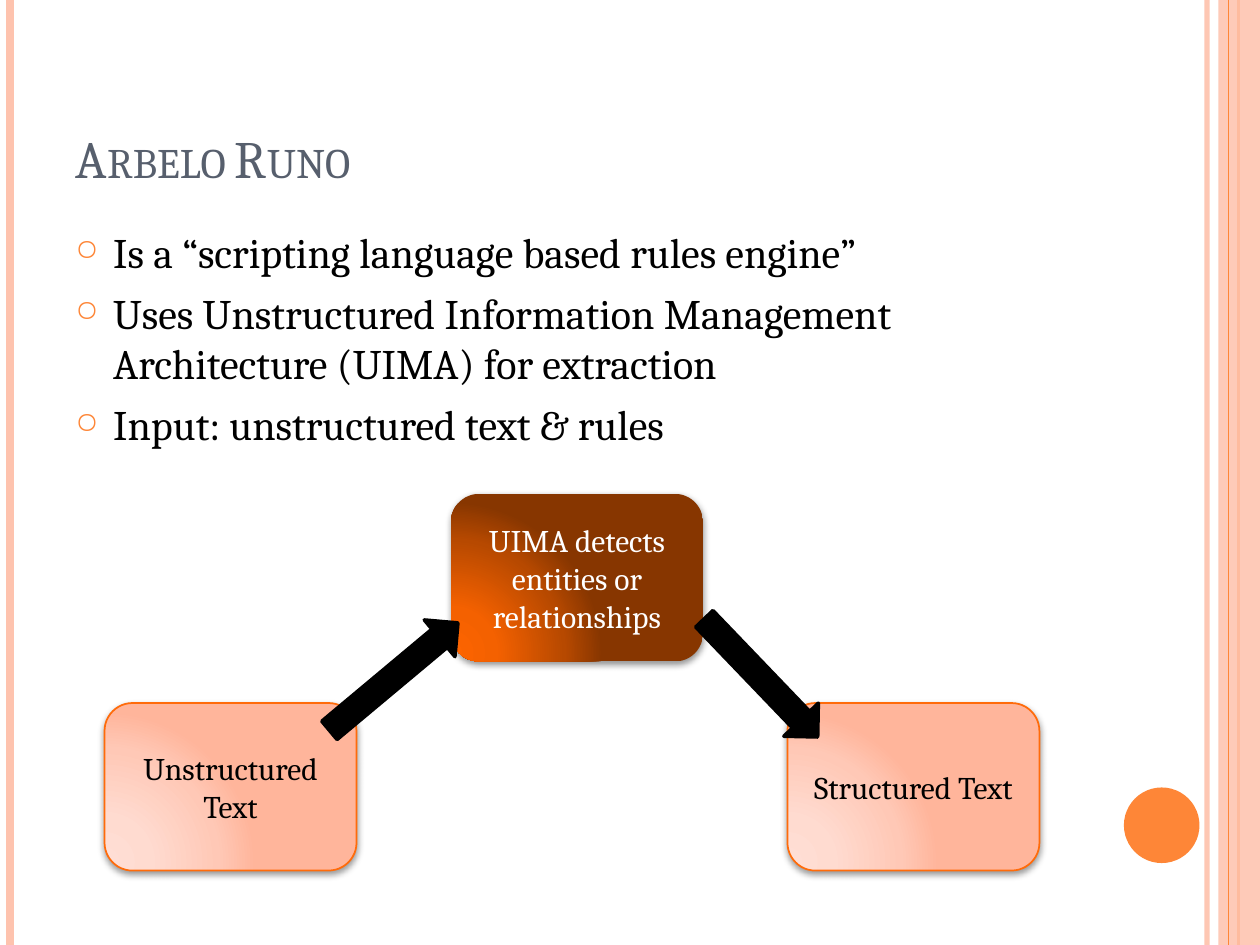
from lxml import etree
from pptx import Presentation
from pptx.dml.color import RGBColor
from pptx.enum import shapes, text
from pptx.oxml import parse_xml
from pptx.oxml.ns import nsdecls, qn
from pptx.util import Inches, Pt

FONT = "Cambria"
ORANGE, PEACH, BLACK = "FE8637", "FEC3AE", "000000"
SHAPE = shapes.MSO_SHAPE

TITLE = "Arbelo Runo"
BULLETS = [
    "Is a “scripting language based rules engine”",
    "Uses Unstructured Information Management Architecture (UIMA) for extraction",
    "Input: unstructured text & rules",
]
# x, colour, width in points, opacity in percent
RULES_BEHIND = [(9.58, PEACH, 3, 93), (0.08, PEACH, 4.5, 100), (9.83, ORANGE, 1.5, 100)]
RULE_IN_FRONT = (9.75, ORANGE, 0.75, 100)

LIGHT = dict(stops=[(0, "FFDED5"), (30, "FFDBD0"), (75, "FFC8B6"), (100, "FFB59B")],
             line="FF6B0A", color=BLACK, shadow=(40, 2))
DARK = dict(stops=[(0, "FD6400"), (30, "F46100"), (75, "B74900"), (100, "873600")],
            line=None, color="FFFFFF", shadow=(42, 1.6))
BOX_SIZE = (2, 1.33)
BOXES = [
    ("Unstructured Text", 0.83, 5.58, LIGHT),
    ("Structured Text", 6.25, 5.58, LIGHT),
    ("UIMA detects entities or relationships", 3.58, 3.92, DARK),
]
# left, top, width, height, rotation
ARROWS = [(2.46, 5.18, 1.33, 0.38, 320.1), (5.39, 5.19, 1.3, 0.38, 46.2)]


def rgb(color):
    return RGBColor.from_string(color)


def set_alpha(element, percent):
    for clr in element.iter(qn("a:srgbClr")):
        etree.SubElement(clr, qn("a:alpha"), val=str(percent * 1000))


def add_text(p, content, size, color, align=text.PP_ALIGN.LEFT):
    p.alignment = align
    r = p.add_run()
    r.text = content
    r.font.name, r.font.size = FONT, Pt(size)
    r.font.color.rgb = rgb(color)
    return r


def add_rule(s, x, color, width, opacity):
    """Draw a vertical line over the full height of the slide."""
    line = s.shapes.add_connector(shapes.MSO_CONNECTOR.STRAIGHT,
                                  Inches(x), 0, Inches(x), Inches(7.5))
    line.line.color.rgb, line.line.width = rgb(color), Pt(width)
    if opacity < 100:
        set_alpha(line._element.spPr, opacity)
    etree.SubElement(line._element.spPr, qn("a:effectLst"))


def add_shape(s, kind, box, fill=None, line=None, width=1):
    sp = s.shapes.add_shape(kind, *map(Inches, box))
    sp.shadow.inherit = False
    if fill:
        sp.fill.solid()
        sp.fill.fore_color.rgb = rgb(fill)
    if line:
        sp.line.color.rgb, sp.line.width = rgb(line), Pt(width)
    else:
        sp.line.fill.background()
    return sp


def set_glow_fill(sp, stops):
    """Fill with a gradient that spreads from the lower left corner."""
    gs = "".join(f'<a:gs pos="{pos * 1000}"><a:srgbClr val="{color}"/></a:gs>'
                 for pos, color in stops)
    grad = parse_xml(
        f'<a:gradFill {nsdecls("a")} rotWithShape="1"><a:gsLst>{gs}</a:gsLst>'
        '<a:path path="circle"><a:fillToRect l="5000" t="100000" r="120000" b="10000"/>'
        '</a:path></a:gradFill>')
    sp._element.spPr.find(qn("a:prstGeom")).addnext(grad)


def set_shadow(sp, opacity, distance):
    effects = sp._element.spPr.find(qn("a:effectLst"))
    effects.append(parse_xml(
        f'<a:outerShdw {nsdecls("a")} blurRad="{Pt(4)}" dist="{Pt(distance)}" dir="5400000" '
        f'rotWithShape="0"><a:srgbClr val="{BLACK}"/></a:outerShdw>'))
    set_alpha(effects, opacity)


def add_box(s, label, x, y, style):
    sp = add_shape(s, SHAPE.ROUNDED_RECTANGLE, (x, y, *BOX_SIZE), line=style["line"])
    set_glow_fill(sp, style["stops"])
    set_shadow(sp, *style["shadow"])
    tf = sp.text_frame
    tf.word_wrap, tf.vertical_anchor = True, text.MSO_ANCHOR.MIDDLE
    add_text(tf.paragraphs[0], label, 18, style["color"], text.PP_ALIGN.CENTER)


def add_bullet(p, content):
    p.space_before = Pt(6)
    add_text(p, content, 24, BLACK)
    pPr = p._p.get_or_add_pPr()
    pPr.set("marL", str(Inches(0.3)))
    pPr.set("indent", str(Inches(-0.3)))
    for tag, attrs in [("buClr", {}), ("buSzPct", {"val": "70000"}), ("buChar", {"char": "○"})]:
        etree.SubElement(pPr, qn(f"a:{tag}"), attrs)
    etree.SubElement(pPr.find(qn("a:buClr")), qn("a:srgbClr"), val=ORANGE)


def main():
    prs = Presentation()
    prs.slide_width, prs.slide_height = Inches(10), Inches(7.5)
    s = prs.slides.add_slide(prs.slide_layouts[5])

    for rule in RULES_BEHIND:
        add_rule(s, *rule)
    band = add_shape(s, SHAPE.RECTANGLE, (9.67, 0, 0.33, 7.5), PEACH)
    set_alpha(band._element.spPr, 87)
    add_rule(s, *RULE_IN_FRONT)
    add_shape(s, SHAPE.OVAL, (8.92, 6.25, 0.6, 0.6), ORANGE)

    title = s.shapes.title
    title.left, title.top, title.width, title.height = map(Inches, (0.5, 0.3, 8.17, 1.25))
    title.text_frame.vertical_anchor = text.MSO_ANCHOR.BOTTOM
    r = add_text(title.text_frame.paragraphs[0], TITLE, 30, "575F6D")
    r.font._element.set("cap", "small")

    tf = s.shapes.add_textbox(*map(Inches, (0.5, 1.75, 8.17, 5.33))).text_frame
    tf.word_wrap = True
    for i, bullet in enumerate(BULLETS):
        add_bullet(tf.add_paragraph() if i else tf.paragraphs[0], bullet)

    for box in BOXES:
        add_box(s, *box)
    for *box, rotation in ARROWS:
        add_shape(s, SHAPE.RIGHT_ARROW, box, BLACK, BLACK, 2).rotation = rotation

    prs.save("out.pptx")


if __name__ == "__main__":
    main()
